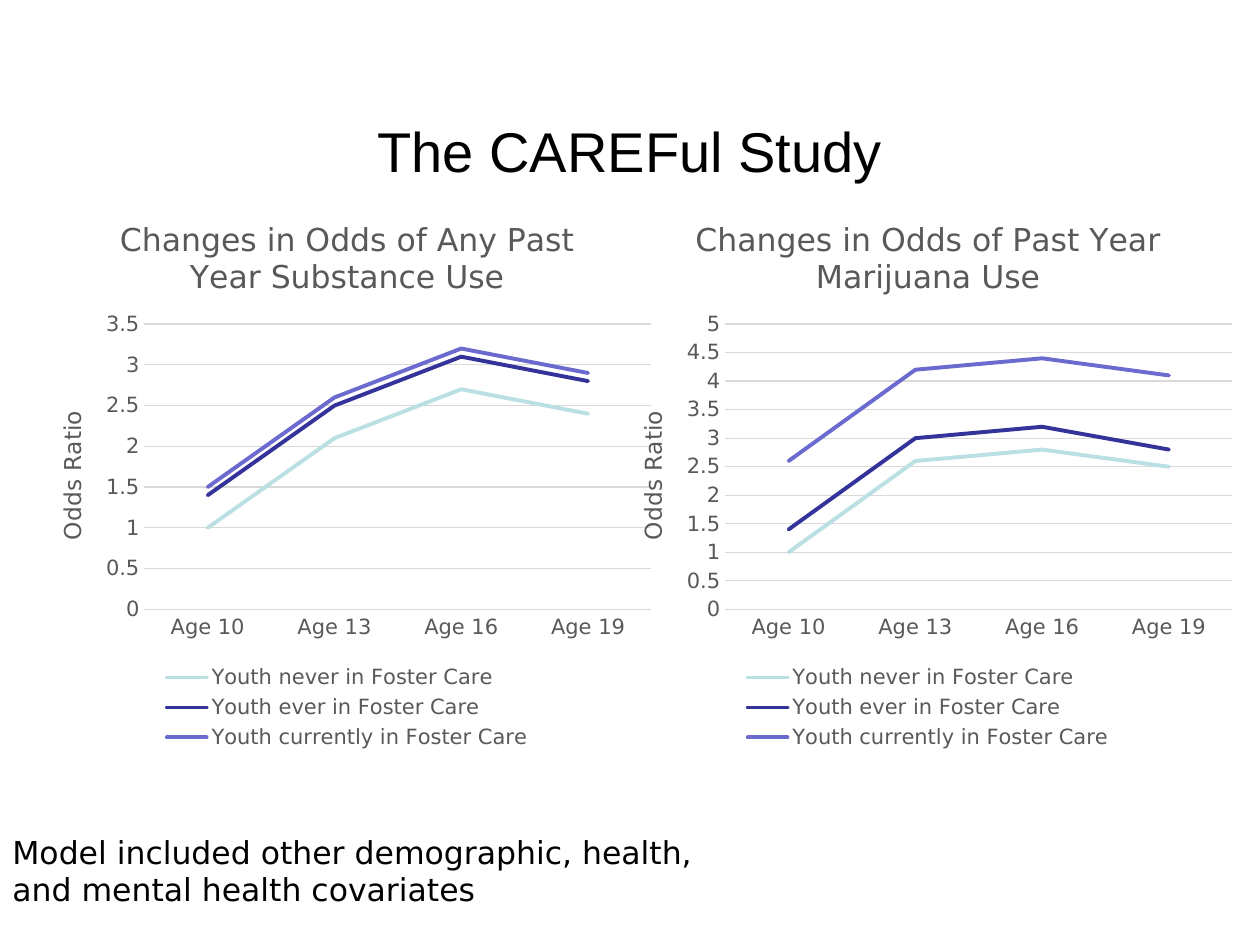
from dataclasses import dataclass

from pptx import Presentation
from pptx.chart.data import CategoryChartData
from pptx.dml.color import RGBColor
from pptx.enum.chart import XL_CHART_TYPE, XL_LEGEND_POSITION, XL_TICK_MARK
from pptx.enum.text import MSO_ANCHOR, PP_ALIGN
from pptx.oxml import parse_xml
from pptx.oxml.ns import nsdecls
from pptx.util import Cm, Pt


@dataclass(frozen=True)
class Theme:
    heading_font: str = "Arial"
    body_font: str = "DejaVu Sans"
    text: str = "000000"
    muted: str = "595959"
    grid: str = "D9D9D9"
    series: tuple = ("BBE0E3", "333399", "6B6BCF")
    heading: float = 32
    body: float = 18
    axis_title: float = 13.3
    label: float = 12


@dataclass(frozen=True)
class OddsChart:
    title: str
    left: float
    values: tuple


THEME = Theme()
AGES = ("Age 10", "Age 13", "Age 16", "Age 19")
GROUPS = (
    "Youth never in Foster Care",
    "Youth ever in Foster Care",
    "Youth currently in Foster Care",
)
CHARTS = (
    OddsChart("Changes in Odds of Any Past Year Substance Use", 0.61,
              ((1, 2.1, 2.7, 2.4), (1.4, 2.5, 3.1, 2.8), (1.5, 2.6, 3.2, 2.9))),
    OddsChart("Changes in Odds of Past Year Marijuana Use", 12.32,
              ((1, 2.6, 2.8, 2.5), (1.4, 3, 3.2, 2.8), (2.6, 4.2, 4.4, 4.1))),
)
PLOT_AREA = {"x": 0.18, "y": 0.23, "w": 0.8, "h": 0.51}


def set_font(font, size: float, color: str, name: str = THEME.body_font) -> None:
    for key, value in {"size": Pt(size), "name": name, "bold": False}.items():
        setattr(font, key, value)
    font.color.rgb = RGBColor.from_string(color)


def set_line(line, color: str, width: float) -> None:
    line.color.rgb = RGBColor.from_string(color)
    line.width = Pt(width)


def set_title(owner, text: str, size: float) -> None:
    """Give a chart or an axis its title."""
    tf = (owner.chart_title if hasattr(owner, "chart_title") else owner.axis_title).text_frame
    tf.text = text
    set_font(tf.paragraphs[0].runs[0].font, size, THEME.muted)


def fix_plot_area(chart) -> None:
    """Place the inner plot area by fractions of the chart."""
    modes = '<c:xMode val="edge"/><c:yMode val="edge"/>'
    sizes = "".join(f'<c:{k} val="{v}"/>' for k, v in PLOT_AREA.items())
    plot_area = chart.plots[0]._element.getparent()
    for old in plot_area.findall("{*}layout"):
        plot_area.remove(old)
    plot_area.insert(0, parse_xml(
        f'<c:layout {nsdecls("c")}><c:manualLayout><c:layoutTarget val="inner"/>'
        f"{modes}{sizes}</c:manualLayout></c:layout>"))


def add_odds_chart(slide, spec_: OddsChart) -> None:
    data = CategoryChartData()
    data.categories = AGES
    for group, values in zip(GROUPS, spec_.values):
        data.add_series(group, values)
    chart = slide.shapes.add_chart(
        XL_CHART_TYPE.LINE, Cm(spec_.left), Cm(3.94), Cm(12.78), Cm(11.28), data).chart
    set_font(chart.font, 10, THEME.text)
    set_title(chart, spec_.title, THEME.body)
    chart.plots[0].vary_by_categories = False

    for series, color in zip(chart.plots[0].series, THEME.series):
        series.smooth = False
        set_line(series.format.line, color, 2.25)
        series.format.line._get_or_add_ln().set("cap", "rnd")

    for axis in (chart.category_axis, chart.value_axis):
        axis.major_tick_mark = axis.minor_tick_mark = XL_TICK_MARK.NONE
        set_font(axis.tick_labels.font, THEME.label, THEME.muted)
    set_line(chart.category_axis.format.line, THEME.grid, 0.75)
    chart.value_axis.format.line.fill.background()
    set_line(chart.value_axis.major_gridlines.format.line, THEME.grid, 0.75)
    set_title(chart.value_axis, "Odds Ratio", THEME.axis_title)

    chart.has_legend = True
    chart.legend.position = XL_LEGEND_POSITION.BOTTOM
    chart.legend.include_in_layout = False
    set_font(chart.legend.font, THEME.label, THEME.muted)
    fix_plot_area(chart)


def add_heading(slide, text: str) -> None:
    sp = slide.shapes.title
    box = {"left": Cm(1.27), "top": Cm(2.11), "width": Cm(22.86), "height": Cm(1.83)}
    for key, value in box.items():
        setattr(sp, key, value)
    tf = sp.text_frame
    tf.text = text
    tf.vertical_anchor = MSO_ANCHOR.MIDDLE
    p = tf.paragraphs[0]
    p.alignment = PP_ALIGN.CENTER
    set_font(p.runs[0].font, THEME.heading, THEME.text, THEME.heading_font)


def add_note(slide, text: str) -> None:
    tf = slide.shapes.add_textbox(Cm(0), Cm(16.66), Cm(15.54), Cm(1.8)).text_frame
    tf.word_wrap = True
    tf.text = text
    set_font(tf.paragraphs[0].runs[0].font, THEME.body, THEME.text)


def main() -> None:
    prs = Presentation()
    prs.slide_width, prs.slide_height = Cm(25.4), Cm(19.05)
    slide = prs.slides.add_slide(prs.slide_layouts[5])
    add_heading(slide, "The CAREFul Study")
    add_note(slide, "Model included other demographic, health, and mental health covariates")
    for odds_chart in CHARTS:
        add_odds_chart(slide, odds_chart)
    prs.save("out.pptx")


if __name__ == "__main__":
    main()
